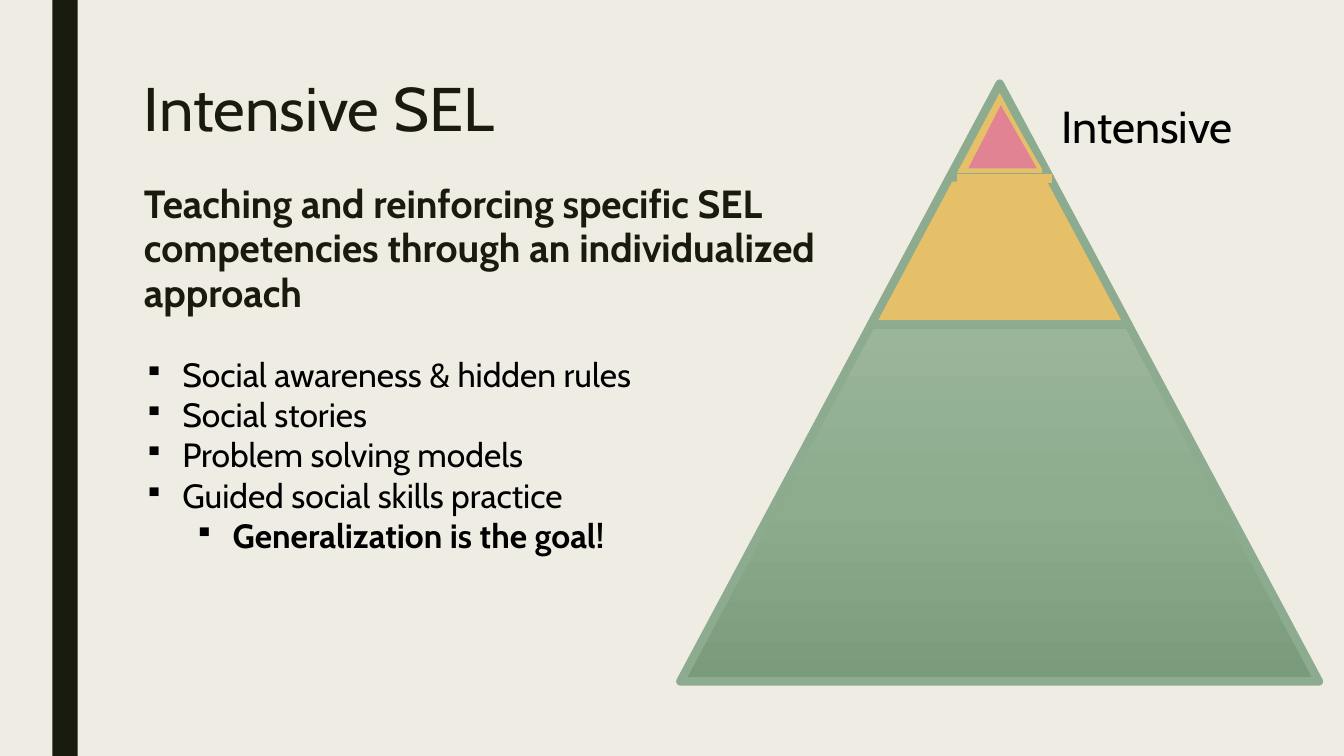
"""Build the Intensive SEL slide with its three-tier support pyramid."""
from dataclasses import dataclass

from lxml.etree import SubElement
from pptx import Presentation
from pptx.dml.color import RGBColor
from pptx.enum.shapes import MSO_CONNECTOR as Connector, MSO_SHAPE as Preset
from pptx.enum.text import MSO_ANCHOR as Anchor, MSO_AUTO_SIZE as AutoSize
from pptx.oxml.ns import qn
from pptx.util import Inches, Pt

COLOURS = {
    "paper": "EFEDE3", "dark": "191B0E", "black": "000000",
    "gold": "E6C069", "pink": "E28394", "green": "8DAB8E",
}
TIER_GRADIENT = [(0, "9BB59B"), (50, "8CAC8D"), (100, "7A9B7B")]
FONT = "Cabin"
APEX_X, APEX_Y, SLOPE = 9.915, 0.83, 0.534


@dataclass
class Line:
    text: str
    bold: bool = False
    level: int = 0
    bullet: bool = False


@dataclass
class TextBlock:
    left: float
    top: float
    width: float
    height: float
    size: float
    colour: str
    lines: list[Line]
    spacing: float = 1.0
    before: float = 0
    after: float = 0
    grow: bool = False


@dataclass
class Tier:
    height: float
    gradient: bool = False


BLOCKS = [
    TextBlock(1.33, 0.73, 10.5, 1.62, 44, "dark", [Line("Intensive SEL")], spacing=0.89),
    TextBlock(1.33, 1.77, 7.06, 1.1, 28, "dark",
              [Line("Teaching and reinforcing specific SEL competencies "
                    "through an individualized approach", bold=True)],
              spacing=0.94, before=10, after=2),
    TextBlock(1.33, 3.46, 6.82, 2.42, 24, "black", [
        Line("Social awareness & hidden rules", bullet=True),
        Line("Social stories", bullet=True),
        Line("Problem solving models", bullet=True),
        Line("Guided social skills practice", bullet=True),
        Line("Generalization is the goal!", bold=True, level=1, bullet=True),
    ], grow=True),
    TextBlock(10.43, 0.93, 2.26, 0.64, 32, "black", [Line("Intensive")], grow=True),
]
TIERS = [Tier(0.93), Tier(1.46), Tier(3.54, gradient=True)]


def rgb(name: str) -> RGBColor:
    return RGBColor.from_string(COLOURS[name])


def add_bullet(para, level: int) -> None:
    properties = para._p.get_or_add_pPr()
    properties.set("marL", str(Inches(0.38 + 0.5 * level)))
    properties.set("indent", str(-Inches(0.38)))
    SubElement(properties, qn("a:buSzPct")).set("val", "80000")
    SubElement(properties, qn("a:buChar")).set("char", "▪")


def add_text(page, block: TextBlock) -> None:
    box = page.shapes.add_textbox(Inches(block.left), Inches(block.top),
                                  Inches(block.width), Inches(block.height))
    frame = box.text_frame
    frame.word_wrap = True
    frame.vertical_anchor = Anchor.TOP
    frame.auto_size = AutoSize.SHAPE_TO_FIT_TEXT if block.grow else AutoSize.NONE
    for index, line in enumerate(block.lines):
        para = frame.add_paragraph() if index else frame.paragraphs[0]
        para.level = line.level
        para.line_spacing = block.spacing
        para.space_before, para.space_after = Pt(block.before), Pt(block.after)
        if line.bullet:
            add_bullet(para, line.level)
        span = para.add_run()
        span.text = line.text
        span.font.name, span.font.size = FONT, Pt(block.size)
        span.font.bold = line.bold
        span.font.color.rgb = rgb(block.colour)


def add_preset(page, preset, left: float, top: float, width: float, height: float,
               fill: str, line: str | None = None, weight: float = 0):
    shape = page.shapes.add_shape(preset, Inches(left), Inches(top),
                                  Inches(width), Inches(height))
    shape.shadow.inherit = False
    shape.fill.solid()
    shape.fill.fore_color.rgb = rgb(fill)
    if line:
        shape.line.color.rgb = rgb(line)
        shape.line.width = Pt(weight)
    else:
        shape.line.fill.background()
    return shape


def apply_gradient(shape) -> None:
    shape.fill.gradient()
    gradient = shape._element.spPr.find(qn("a:gradFill"))
    stops = gradient.find(qn("a:gsLst"))
    for stop in list(stops):
        stops.remove(stop)
    for position, colour in TIER_GRADIENT:
        stop = SubElement(stops, qn("a:gs"))
        stop.set("pos", str(position * 1000))
        SubElement(stop, qn("a:srgbClr")).set("val", colour)
    gradient.find(qn("a:lin")).set("ang", str(90 * 60000))


def add_pyramid(page) -> None:
    depth = 0.0
    for tier in TIERS:
        top = APEX_Y + depth
        depth += tier.height
        half = SLOPE * depth
        shape = add_preset(page, Preset.TRAPEZOID, APEX_X - half, top, 2 * half,
                           tier.height, "gold", "green", 6)
        shape.adjustments[0] = SLOPE
        SubElement(shape.line._get_or_add_ln(), qn("a:round"))
        if tier.gradient:
            apply_gradient(shape)


def add_divider(page) -> None:
    divider = page.shapes.add_connector(Connector.STRAIGHT, Inches(9.49), Inches(1.77),
                                        Inches(10.43), Inches(1.77))
    divider.line.color.rgb = rgb("gold")
    divider.line.width = Pt(6)
    SubElement(divider._element.spPr, qn("a:effectLst"))


def main() -> None:
    deck = Presentation()
    deck.slide_width, deck.slide_height = Inches(13.33), Inches(7.5)
    page = deck.slides.add_slide(deck.slide_layouts[6])
    page.background.fill.solid()
    page.background.fill.fore_color.rgb = rgb("paper")
    add_preset(page, Preset.RECTANGLE, 0.52, 0, 0.25, 7.5, "dark")
    add_pyramid(page)
    add_divider(page)
    peak = add_preset(page, Preset.ISOSCELES_TRIANGLE, 9.57, 1, 0.75, 0.69,
                      "pink", "gold", 2.75)
    peak.adjustments[0] = 0.474
    for block in BLOCKS:
        add_text(page, block)
    deck.save("out.pptx")


if __name__ == "__main__":
    main()
